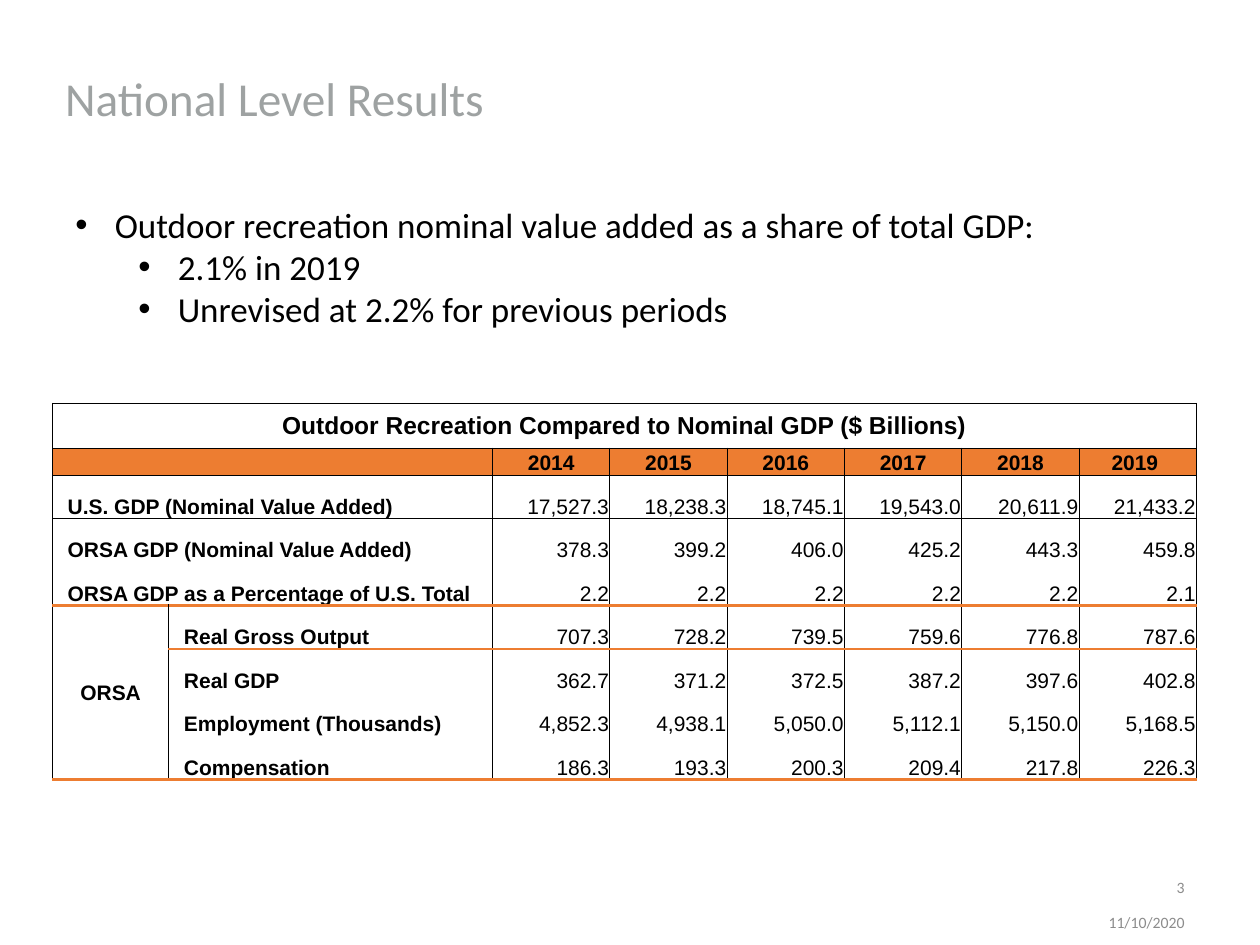
import pptx
import pptx.dml.color
import pptx.enum.text
import pptx.oxml
import pptx.oxml.ns
import pptx.util
from dataclasses import dataclass
from lxml import etree

Pt = pptx.util.Pt
qn = pptx.oxml.ns.qn
Align = pptx.enum.text.PP_ALIGN
Anchor = pptx.enum.text.MSO_ANCHOR
AutoSize = pptx.enum.text.MSO_AUTO_SIZE


@dataclass(frozen=True)
class Theme:
    text_font: str = "Calibri"
    table_font: str = "Arial"
    title_color: str = "9EA2A2"
    footer_color: str = "8C8C8C"
    text_color: str = "000000"
    accent_color: str = "ED7D31"
    title_size: float = 27
    body_size: float = 20
    caption_size: float = 14
    table_size: float = 12
    footer_size: float = 9
    thin_line: float = 0.5
    thick_line: float = 1.5


THEME = Theme()
NO_STYLE = "{2D5ABB26-0587-4C30-8999-92F81FD0307C}"
CAPTION = "Outdoor Recreation Compared to Nominal GDP ($ Billions)"
YEARS = ["2014", "2015", "2016", "2017", "2018", "2019 "]
SHARE_ROWS = [
    ("U.S. GDP (Nominal Value Added)", "17,527.3 18,238.3 18,745.1 19,543.0 20,611.9 21,433.2"),
    ("ORSA GDP (Nominal Value Added)", "378.3 399.2 406.0 425.2 443.3 459.8"),
    ("ORSA GDP as a Percentage of U.S. Total", "2.2 2.2 2.2 2.2 2.2 2.1"),
]
ORSA_ROWS = [
    ("Real Gross Output", "707.3 728.2 739.5 759.6 776.8 787.6"),
    ("Real GDP", "362.7 371.2 372.5 387.2 397.6 402.8"),
    ("Employment (Thousands)", "4,852.3 4,938.1 5,050.0 5,112.1 5,150.0 5,168.5"),
    ("Compensation", "186.3 193.3 200.3 209.4 217.8 226.3"),
]
BULLETS = [
    (0, "Outdoor recreation nominal value added as a share of total GDP:"),
    (1, "2.1% in 2019"),
    (1, "Unrevised at 2.2% for previous periods"),
]


def add_run(paragraph, text, font, size, color, bold=False):
    run = paragraph.add_run()
    run.text = text
    run.font.name = font
    run.font.size = Pt(size)
    run.font.bold = bold
    run.font.color.rgb = pptx.dml.color.RGBColor.from_string(color)


def place_title(slide, left, top, width, height):
    title = slide.shapes.title
    title.left, title.top, title.width, title.height = map(Pt, (left, top, width, height))
    frame = title.text_frame
    frame.auto_size = AutoSize.NONE
    frame.vertical_anchor = Anchor.MIDDLE
    frame.margin_bottom = 0
    paragraph = frame.paragraphs[0]
    paragraph.alignment = Align.LEFT
    add_run(paragraph, "National Level Results", THEME.text_font, THEME.title_size, THEME.title_color)


def add_text_box(slide, left, top, width, height):
    frame = slide.shapes.add_textbox(*map(Pt, (left, top, width, height))).text_frame
    frame.word_wrap = True
    return frame


def add_bullets(slide, left, top, width, height):
    frame = add_text_box(slide, left, top, width, height)
    frame.auto_size = AutoSize.SHAPE_TO_FIT_TEXT
    hanging = 22.5
    for index, (level, text) in enumerate(BULLETS):
        paragraph = frame.add_paragraph() if index else frame.paragraphs[0]
        paragraph.level = level
        properties = paragraph._p.get_or_add_pPr()
        properties.set("marL", str(Pt(hanging + 36 * level)))
        properties.set("indent", str(Pt(-hanging)))
        etree.SubElement(properties, qn("a:buFont"), typeface="Arial")
        etree.SubElement(properties, qn("a:buChar"), char="•")
        add_run(paragraph, text, THEME.text_font, THEME.body_size, THEME.text_color)


def add_footer_text(slide, text, left, top, width, height):
    frame = add_text_box(slide, left, top, width, height)
    frame.vertical_anchor = Anchor.MIDDLE
    paragraph = frame.paragraphs[0]
    paragraph.alignment = Align.RIGHT
    add_run(paragraph, text, THEME.text_font, THEME.footer_size, THEME.footer_color)


def set_border(cell, side, color, width):
    line = etree.SubElement(cell._tc.get_or_add_tcPr(), qn("a:ln" + side), w=str(Pt(width)))
    fill = etree.SubElement(line, qn("a:solidFill"))
    etree.SubElement(fill, qn("a:srgbClr"), val=color)


def fill_cell(cell, text, alignment=Align.LEFT, anchor=Anchor.BOTTOM,
              size=THEME.table_size, bold=True, indent=0.5):
    cell.margin_left = Pt(indent)
    cell.margin_right = cell.margin_top = Pt(0.5)
    cell.margin_bottom = 0
    cell.vertical_anchor = anchor
    paragraph = cell.text_frame.paragraphs[0]
    paragraph.alignment = alignment
    if text:
        add_run(paragraph, text, THEME.table_font, size, THEME.text_color, bold)
    else:
        etree.SubElement(paragraph._p, qn("a:endParaRPr"), sz=str(size * 100))


def draw_borders(table):
    black = (THEME.text_color, THEME.thin_line)
    orange = (THEME.accent_color, THEME.thick_line)
    column_count, row_count = len(table.columns), len(table.rows)
    orsa_row = 2 + len(SHARE_ROWS)
    rules = {0: black, 1: black, 2: black, orsa_row: orange, row_count: orange}
    for row in range(row_count):
        edges = set(range(column_count + 1))
        if row == 0:
            edges = {0, column_count}
        elif row < orsa_row:
            edges.remove(1)
        for column in range(column_count):
            cell = table.cell(row, column)
            bottom = row + cell.span_height if cell.is_merge_origin else row + 1
            inside_orsa = column == 0 and row > orsa_row
            if column in edges:
                set_border(cell, "L", *black)
            if column + 1 in edges or cell.is_merge_origin:
                set_border(cell, "R", *black)
            if row in rules and not inside_orsa:
                set_border(cell, "T", *rules[row])
            if bottom in rules:
                set_border(cell, "B", *rules[bottom])
            if row == 1:
                cell.fill.solid()
                cell.fill.fore_color.rgb = pptx.dml.color.RGBColor.from_string(THEME.accent_color)
            else:
                cell.fill.background()


def add_results_table(slide, left, top, width, height):
    group_width, label_width, caption_height, header_height = 66.5, 185, 25.7, 15.4
    data = SHARE_ROWS + ORSA_ROWS
    row_count, column_count = 2 + len(data), 2 + len(YEARS)
    table = slide.shapes.add_table(row_count, column_count, *map(Pt, (left, top, width, height))).table
    table._tbl.tblPr.find(qn("a:tableStyleId")).text = NO_STYLE
    table.first_row = table.horz_banding = False
    year_width = (width - group_width - label_width) / len(YEARS)
    data_height = (height - caption_height - header_height) / len(data)
    for column, size in zip(table.columns, [group_width, label_width] + [year_width] * len(YEARS)):
        column.width = Pt(size)
    for row, size in zip(table.rows, [caption_height, header_height] + [data_height] * len(data)):
        row.height = Pt(size)

    orsa_row = 2 + len(SHARE_ROWS)
    table.cell(0, 0).merge(table.cell(0, column_count - 1))
    for row in range(1, orsa_row):
        table.cell(row, 0).merge(table.cell(row, 1))
    table.cell(orsa_row, 0).merge(table.cell(row_count - 1, 0))

    fill_cell(table.cell(0, 0), CAPTION, Align.CENTER, Anchor.MIDDLE, THEME.caption_size)
    fill_cell(table.cell(1, 0), "")
    fill_cell(table.cell(orsa_row, 0), "ORSA", Align.CENTER, Anchor.MIDDLE)
    for column, year in enumerate(YEARS, 2):
        fill_cell(table.cell(1, column), year, Align.CENTER)
    for row, (label, values) in enumerate(data, 2):
        fill_cell(table.cell(row, int(row >= orsa_row)), label, indent=8.7)
        for column, value in enumerate(values.split(), 2):
            fill_cell(table.cell(row, column), value, Align.RIGHT, bold=False)
    draw_borders(table)


def main():
    presentation = pptx.Presentation()
    presentation.slide_width, presentation.slide_height = Pt(720), Pt(540)
    slide = presentation.slides.add_slide(presentation.slide_layouts[5])
    place_title(slide, 30, 18, 546, 72)
    add_footer_text(slide, "11/10/2020", 606, 520.5, 78, 13)
    add_footer_text(slide, "3", 642, 499, 42, 16)
    add_bullets(slide, 36, 112.5, 630, 80)
    add_results_table(slide, 30, 230.4, 653.8, 215.3)
    presentation.save("out.pptx")


if __name__ == "__main__":
    main()
